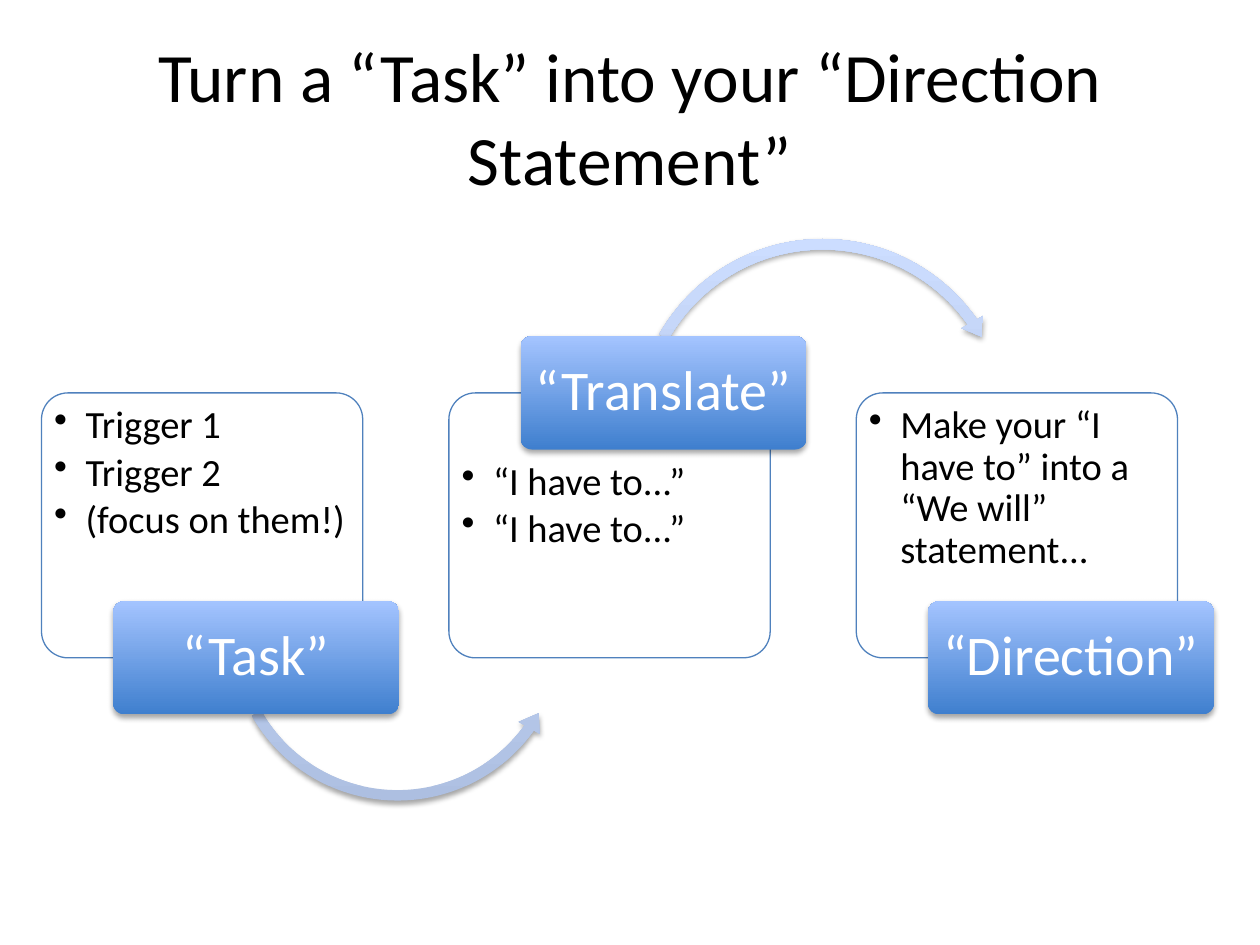
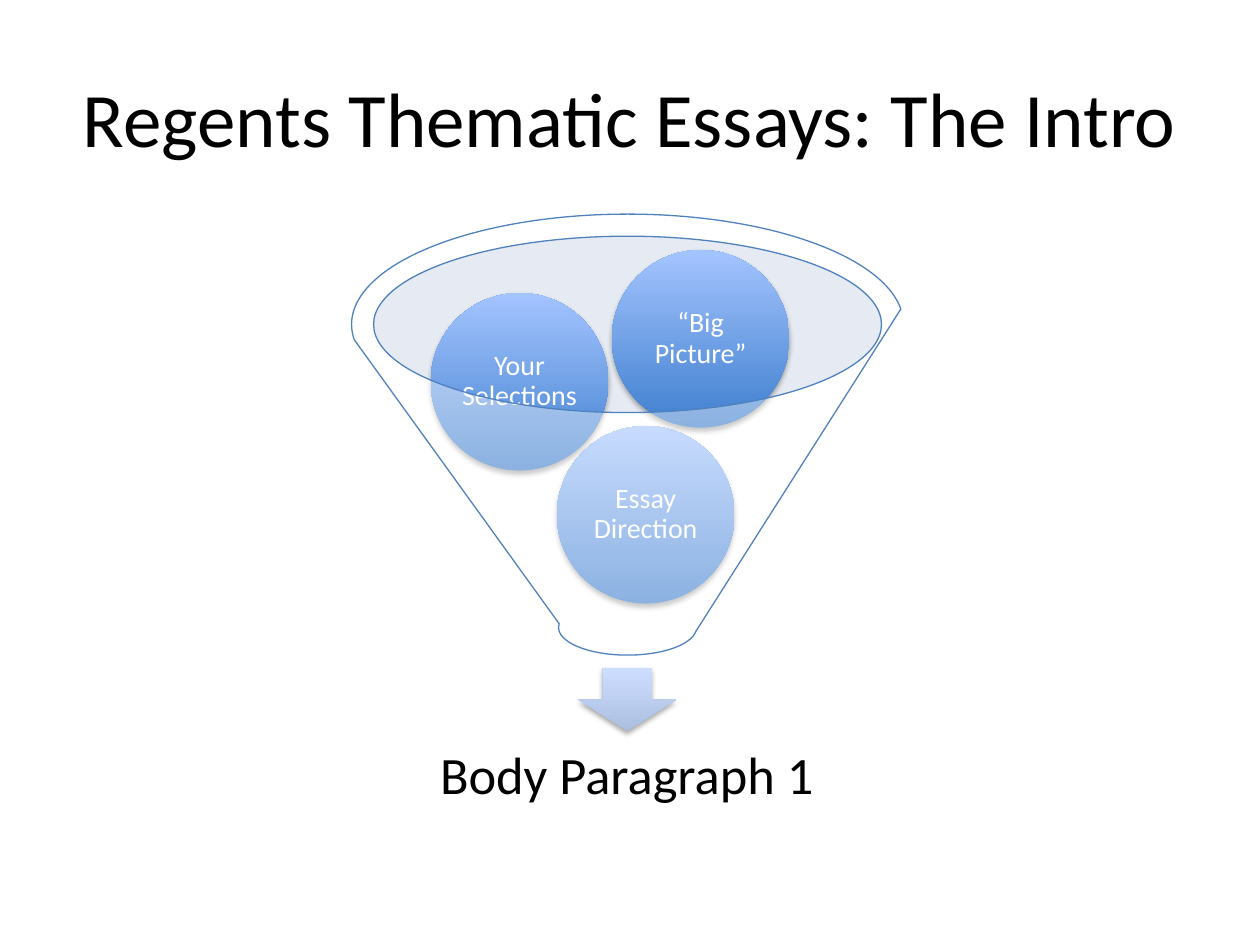
from dataclasses import dataclass
from typing import Optional

from lxml.etree import SubElement
from pptx import Presentation
from pptx.dml.color import RGBColor
from pptx.enum.shapes import MSO_SHAPE
from pptx.enum.text import MSO_ANCHOR, PP_ALIGN
from pptx.oxml.ns import qn
from pptx.shapes.autoshape import Shape
from pptx.slide import Slide
from pptx.util import Pt

COLORS = {
    "text": "000000",
    "light": "FFFFFF",
    "outline": "4F81BD",
    "strong_low": "3F7FCE",
    "strong_high": "A4C4FF",
    "pale_low": "ADBFE1",
    "pale_high": "CCDDFF",
    "rim": "C2CDE1",
    "shadow": "000000",
}
FONT = "Calibri"
STRONG = ("strong_low", "strong_high")
PALE = ("pale_low", "pale_high")

PANEL_LEFT, PANEL_TOP, PANEL_STEP = 23.7, 224.5, 232.8
PANEL_WIDTH, PANEL_HEIGHT = 183.6, 151.4
LABEL_SHIFT, LABEL_WIDTH, LABEL_HEIGHT = 41, 163.4, 64.8
CIRCLE_SIZE = 101.5


@dataclass(frozen=True)
class Area:
    left: float
    top: float
    width: float
    height: float


@dataclass(frozen=True)
class TextStyle:
    size: float
    color: str = "text"
    align: PP_ALIGN = PP_ALIGN.CENTER
    anchor: MSO_ANCHOR = MSO_ANCHOR.MIDDLE
    spacing: float = 0.9
    after: float = 0
    bullet_indent: float = 0


@dataclass(frozen=True)
class Arc:
    preset: MSO_SHAPE
    area: Area
    adjustments: tuple[float, ...]


@dataclass(frozen=True)
class Stage:
    label: str
    points: tuple[str, ...]
    label_on_top: bool = False
    arc: Optional[Arc] = None


@dataclass(frozen=True)
class Circle:
    text: str
    left: float
    top: float


LABEL_STYLE = TextStyle(32, "light")
CIRCLE_STYLE = TextStyle(16, "light")
RESULT_STYLE = TextStyle(30)
POINT_STYLE = TextStyle(22, align=PP_ALIGN.LEFT, anchor=MSO_ANCHOR.TOP,
                        after=3.3, bullet_indent=18)

STAGES = (
    Stage("“Task”", ("Trigger 1", "Trigger 2", "(focus on them!)"),
          arc=Arc(MSO_SHAPE.LEFT_CIRCULAR_ARROW, Area(127.5, 262.1, 199.4, 199.4),
                  (0.03, 3.706, 21.461, 90.245, 0.035))),
    Stage("“Translate”", ("“I have to...”", "“I have to...”"), label_on_top=True,
          arc=Arc(MSO_SHAPE.CIRCULAR_ARROW, Area(358.6, 132.5, 223.2, 223.2),
                  (0.027, 3.292, 194.953, 125.755, 0.032))),
    Stage("“Direction”", ("Make your “I have to” into a “We will” statement...",)),
)
CIRCLES = (
    Circle("Essay Direction", 318.2, 243.4),
    Circle("Your Selections", 246.1, 167.4),
    Circle("“Big Picture”", 349.6, 142.9),
)


def rgb(name: str) -> RGBColor:
    return RGBColor.from_string(COLORS[name])


def add_alpha(color_element, percent: int) -> None:
    SubElement(color_element, qn("a:alpha"), val=str(percent * 1000))


def add_shape(page: Slide, preset: MSO_SHAPE, area: Area,
              adjustments: tuple[float, ...] = ()) -> Shape:
    shape = page.shapes.add_shape(preset, Pt(area.left), Pt(area.top),
                                  Pt(area.width), Pt(area.height))
    shape.shadow.inherit = False
    shape.line.fill.background()
    for index, value in enumerate(adjustments):
        shape.adjustments[index] = value
    return shape


def add_glass(page: Slide, preset: MSO_SHAPE, area: Area, color: str, alpha: int,
              outlined: bool = True, adjustments: tuple[float, ...] = ()) -> Shape:
    shape = add_shape(page, preset, area, adjustments)
    shape.fill.solid()
    shape.fill.fore_color.rgb = rgb(color)
    add_alpha(shape.element.spPr.find(qn("a:solidFill"))[0], alpha)
    if outlined:
        shape.line.color.rgb = rgb("outline")
        shape.line.width = Pt(0.75)
    return shape


def add_raised(page: Slide, preset: MSO_SHAPE, area: Area, gradient: tuple[str, str],
               adjustments: tuple[float, ...] = ()) -> Shape:
    shape = add_shape(page, preset, area, adjustments)
    shape.fill.gradient()
    shape.fill.gradient_angle = 90
    for stop, position, color in zip(shape.fill.gradient_stops, (0, 1), gradient):
        stop.position = position
        stop.color.rgb = rgb(color)
    effects = shape.element.spPr.find(qn("a:effectLst"))
    shadow = SubElement(effects, qn("a:outerShdw"), blurRad=str(Pt(3.1)),
                        dist=str(Pt(1.8)), dir="5400000", rotWithShape="0")
    add_alpha(SubElement(shadow, qn("a:srgbClr"), val=COLORS["shadow"]), 35)
    return shape


def write(shape: Shape, lines: tuple[str, ...], style: TextStyle,
          margins: tuple[float, float, float, float]) -> None:
    frame = shape.text_frame
    frame.word_wrap = True
    frame.vertical_anchor = style.anchor
    (frame.margin_left, frame.margin_top,
     frame.margin_right, frame.margin_bottom) = map(Pt, margins)
    for index, line in enumerate(lines):
        para = frame.paragraphs[0] if index == 0 else frame.add_paragraph()
        para.text = line
        para.alignment = style.align
        para.line_spacing = style.spacing
        para.space_after = Pt(style.after)
        if style.bullet_indent:
            properties = para._p.get_or_add_pPr()
            properties.set("marL", str(Pt(style.bullet_indent)))
            properties.set("indent", str(-Pt(style.bullet_indent)))
            SubElement(properties, qn("a:buChar"), char="•")
        para.font.name = FONT
        para.font.size = Pt(style.size)
        para.font.color.rgb = rgb(style.color)


def add_text(page: Slide, area: Area, text: str, style: TextStyle,
             margins: tuple[float, float, float, float]) -> None:
    box = page.shapes.add_textbox(Pt(area.left), Pt(area.top),
                                  Pt(area.width), Pt(area.height))
    write(box, (text,), style, margins)


def add_page(deck, title: str, title_size: float) -> Slide:
    page = deck.slides.add_slide(deck.slide_layouts[6])
    add_text(page, Area(36, 21.6, 648, 90), title,
             TextStyle(title_size, spacing=1.0), (7.2, 3.6, 7.2, 3.6))
    return page


def add_stage(page: Slide, stage: Stage, index: int) -> None:
    left = PANEL_LEFT + index * PANEL_STEP
    panel = add_glass(page, MSO_SHAPE.ROUNDED_RECTANGLE,
                      Area(left, PANEL_TOP, PANEL_WIDTH, PANEL_HEIGHT),
                      "light", 90, adjustments=(0.1,))
    top_margin = 35 if stage.label_on_top else 2.8
    write(panel, stage.points, POINT_STYLE, (2.8, top_margin, 2.8, 2.8))
    if stage.arc:
        add_raised(page, stage.arc.preset, stage.arc.area, PALE, stage.arc.adjustments)
    edge = PANEL_TOP if stage.label_on_top else PANEL_TOP + PANEL_HEIGHT
    label = add_raised(page, MSO_SHAPE.ROUNDED_RECTANGLE,
                       Area(left + LABEL_SHIFT, edge - LABEL_HEIGHT / 2,
                            LABEL_WIDTH, LABEL_HEIGHT), STRONG, (0.1,))
    write(label, (stage.label,), LABEL_STYLE, (4.8, 2.9, 4.8, 2.9))


def build_direction_page(deck) -> None:
    page = add_page(deck, "Turn a “Task” into your “Direction Statement”", 39.6)
    for index, stage in enumerate(STAGES):
        add_stage(page, stage, index)


def build_funnel_page(deck) -> None:
    page = add_page(deck, "Regents Thematic Essays: The Intro", 44)
    add_glass(page, MSO_SHAPE.OVAL, Area(213.4, 134.8, 290, 100.8), "rim", 40,
              outlined=False)
    add_raised(page, MSO_SHAPE.DOWN_ARROW, Area(330.4, 381.8, 56.2, 36), PALE)
    add_text(page, Area(223.2, 410.4, 270, 67.6), "Body Paragraph 1",
             RESULT_STYLE, (16.6,) * 4)
    for circle in CIRCLES:
        ball = add_raised(page, MSO_SHAPE.OVAL,
                          Area(circle.left, circle.top, CIRCLE_SIZE, CIRCLE_SIZE), STRONG)
        write(ball, (circle.text,), CIRCLE_STYLE, (1.5,) * 4)
    add_glass(page, MSO_SHAPE.FUNNEL, Area(200.9, 122.4, 315.4, 252), "light", 40)


def main() -> None:
    deck = Presentation()
    deck.slide_width, deck.slide_height = Pt(720), Pt(540)
    build_direction_page(deck)
    build_funnel_page(deck)
    deck.save("out.pptx")


if __name__ == "__main__":
    main()
